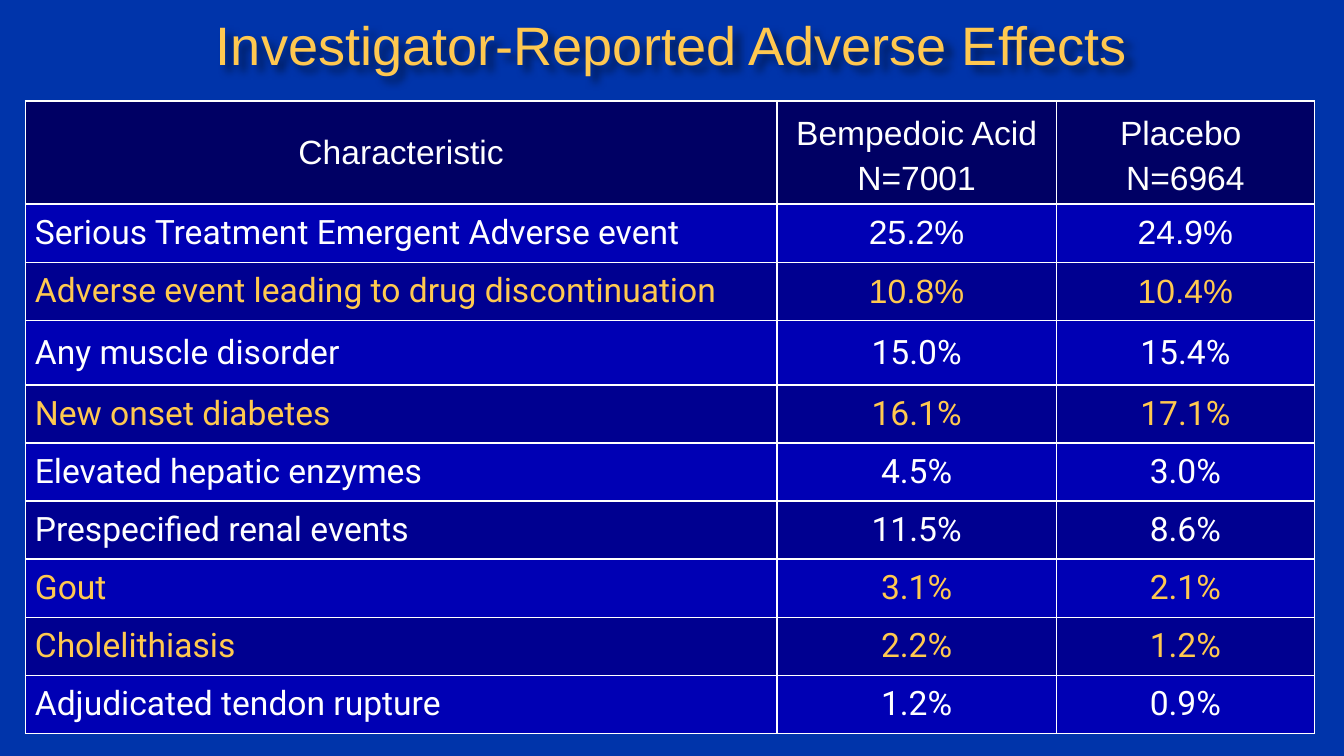
from dataclasses import dataclass

from pptx import Presentation
from pptx.dml.color import RGBColor
from pptx.enum.text import MSO_ANCHOR as Anchor, PP_ALIGN as Align
from pptx.oxml import parse_xml
from pptx.oxml.ns import nsdecls
from pptx.util import Inches, Pt

WIDE = 10
HIGH = WIDE * 9 / 16
WHITE, GOLD, AMBER = "FFFFFF", "FFC850", "FFC94F"
BACK, HEAD = "0034AA", "000064"
BANDS = ("0000B4", "000090")
COLS = (5.59, 2.08, 1.92)
FULL, TOP, TALL = 4.71, 0.77, 0.48
ROW = (FULL - TOP - TALL) / 8
LOOSE, TIGHT = (0.07, 0.04), (0.04, 0)


@dataclass
class Event:
    name: str
    drug: str
    placebo: str
    color: str = WHITE
    font: str = "Roboto"
    inset: tuple[float, float] = LOOSE
    high: float = ROW


HEADS = ("Characteristic", "Bempedoic Acid\nN=7001", "Placebo \nN=6964")
EVENTS = (
    Event("Serious Treatment Emergent Adverse event", "25.2%", "24.9%",
          font="Arial", inset=TIGHT),
    Event("Adverse event leading to drug discontinuation", "10.8%", "10.4%",
          AMBER, font="Arial", inset=TIGHT),
    Event("Any muscle disorder", "15.0%", "15.4%", high=TALL),
    Event("New onset diabetes", "16.1%", "17.1%", AMBER),
    Event("Elevated hepatic enzymes", "4.5%", "3.0%"),
    Event("Prespecified renal events", "11.5%", "8.6%"),
    Event("Gout", "3.1%", "2.1%", AMBER),
    Event("Cholelithiasis", "2.2%", "1.2%", AMBER),
    Event("Adjudicated tendon rupture", "1.2%", "0.9%"),
)


def paint(fill, color: str) -> None:
    fill.solid()
    fill.fore_color.rgb = RGBColor.from_string(color)


def write(frame, text: str, size: float = 18, font: str = "Arial",
          color: str = WHITE, align=Align.CENTER) -> None:
    """Fill a text frame, one paragraph for each line of text."""
    lines = text.split("\n")
    for i, line in enumerate(lines):
        para = frame.add_paragraph() if i else frame.paragraphs[0]
        para.alignment = align
        if len(lines) > 1:
            para.line_spacing = 1.2
        run = para.add_run()
        run.text = line
        run.font.size = Pt(size)
        run.font.name = font
        paint(run.font.fill, color)


def inset(box, side: float, end: float) -> None:
    box.margin_left = box.margin_right = Inches(side)
    box.margin_top = box.margin_bottom = Inches(end)
    box.vertical_anchor = Anchor.MIDDLE


def edge(cell, **widths: float) -> None:
    """Draw white borders; widths in points by side: L, R, T, B."""
    props = cell._tc.get_or_add_tcPr()
    for i, side in enumerate("LRTB"):
        line = parse_xml(
            f'<a:ln{side} {nsdecls("a")} w="{Pt(widths.get(side, 1))}">'
            f'<a:solidFill><a:srgbClr val="{WHITE}"/></a:solidFill></a:ln{side}>')
        props.insert(i, line)


def shade(shape) -> None:
    """Give an unfilled shape's text a soft dark shadow."""
    shape.fill.background()
    shape._element.spPr.append(parse_xml(
        f'<a:effectLst {nsdecls("a")}><a:outerShdw blurRad="50800" dist="50800" '
        'dir="2700000" algn="tl" rotWithShape="0"><a:srgbClr val="000000">'
        '<a:alpha val="50000"/></a:srgbClr></a:outerShdw></a:effectLst>'))


def add_title(slide, text: str) -> None:
    title = slide.shapes.title
    title.left = title.top = 0
    title.width, title.height = Inches(WIDE), Inches(0.65)
    inset(title.text_frame, 0.1, 0.05)
    write(title.text_frame, text, size=29, color=GOLD)
    shade(title)


def add_grid(slide) -> None:
    highs = [TOP] + [event.high for event in EVENTS]
    grid = slide.shapes.add_table(
        len(highs), len(COLS), Inches(0.19), Inches(0.75),
        Inches(sum(COLS)), Inches(FULL)).table
    for col, wide in zip(grid.columns, COLS):
        col.width = Inches(wide)
    for row, high in zip(grid.rows, highs):
        row.height = Inches(high)

    for c, text in enumerate(HEADS):
        cell = grid.cell(0, c)
        inset(cell, *LOOSE)
        write(cell.text_frame, text)
        paint(cell.fill, HEAD)
        edge(cell, B=1.5)

    for r, event in enumerate(EVENTS, 1):
        for c, text in enumerate((event.name, event.drug, event.placebo)):
            cell = grid.cell(r, c)
            inset(cell, *(event.inset if c else LOOSE))
            write(cell.text_frame, text, color=event.color,
                  font=event.font if c else "Roboto",
                  align=Align.CENTER if c else Align.LEFT)
            paint(cell.fill, BANDS[(r - 1) % 2])
            edge(cell, T=1.5 if r == 1 else 1)


def main() -> None:
    deck = Presentation()
    deck.slide_width, deck.slide_height = Inches(WIDE), Inches(HIGH)
    slide = deck.slides.add_slide(deck.slide_layouts[5])
    paint(slide.background.fill, BACK)
    add_title(slide, "Investigator-Reported Adverse Effects")
    add_grid(slide)
    deck.save("out.pptx")


if __name__ == "__main__":
    main()
